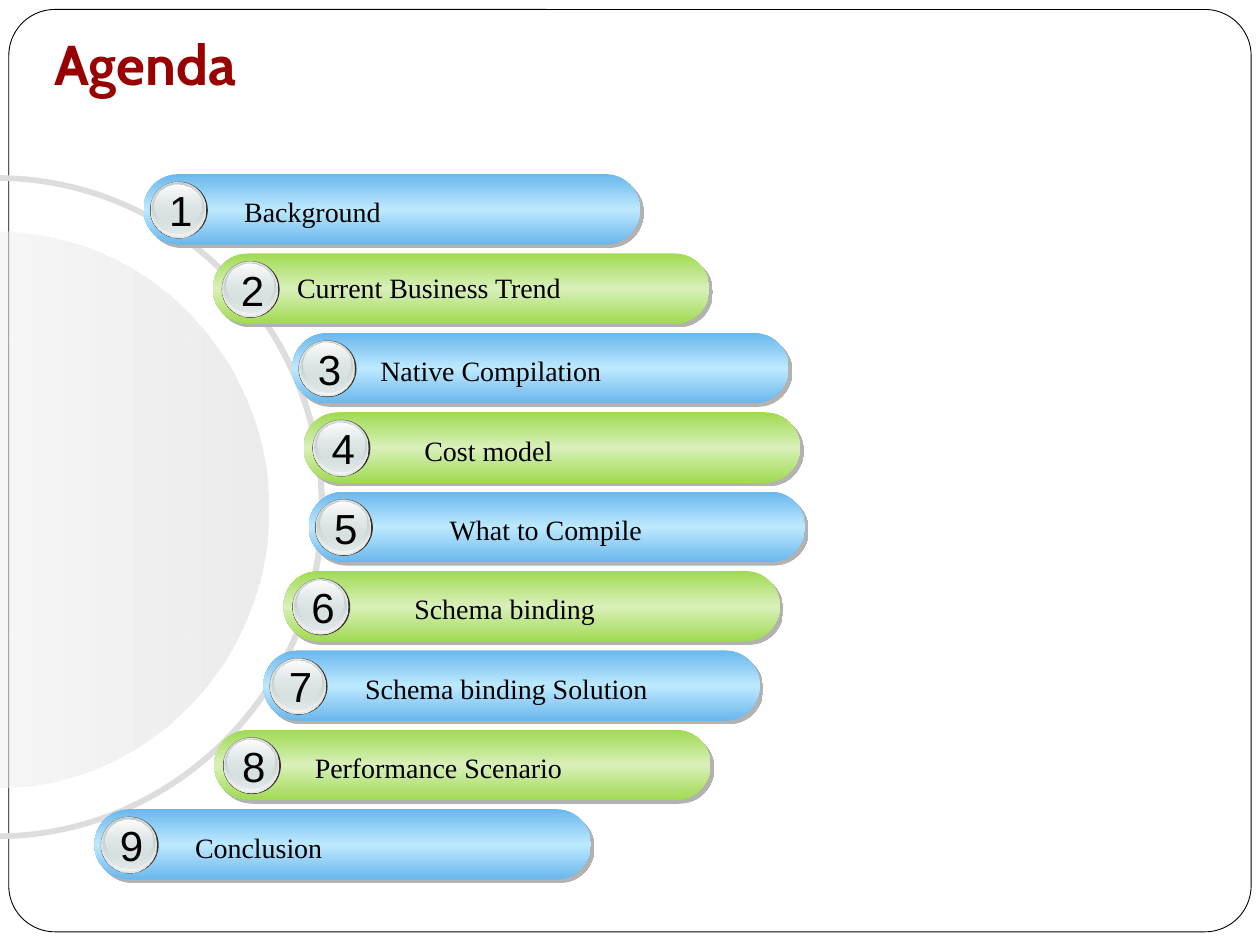
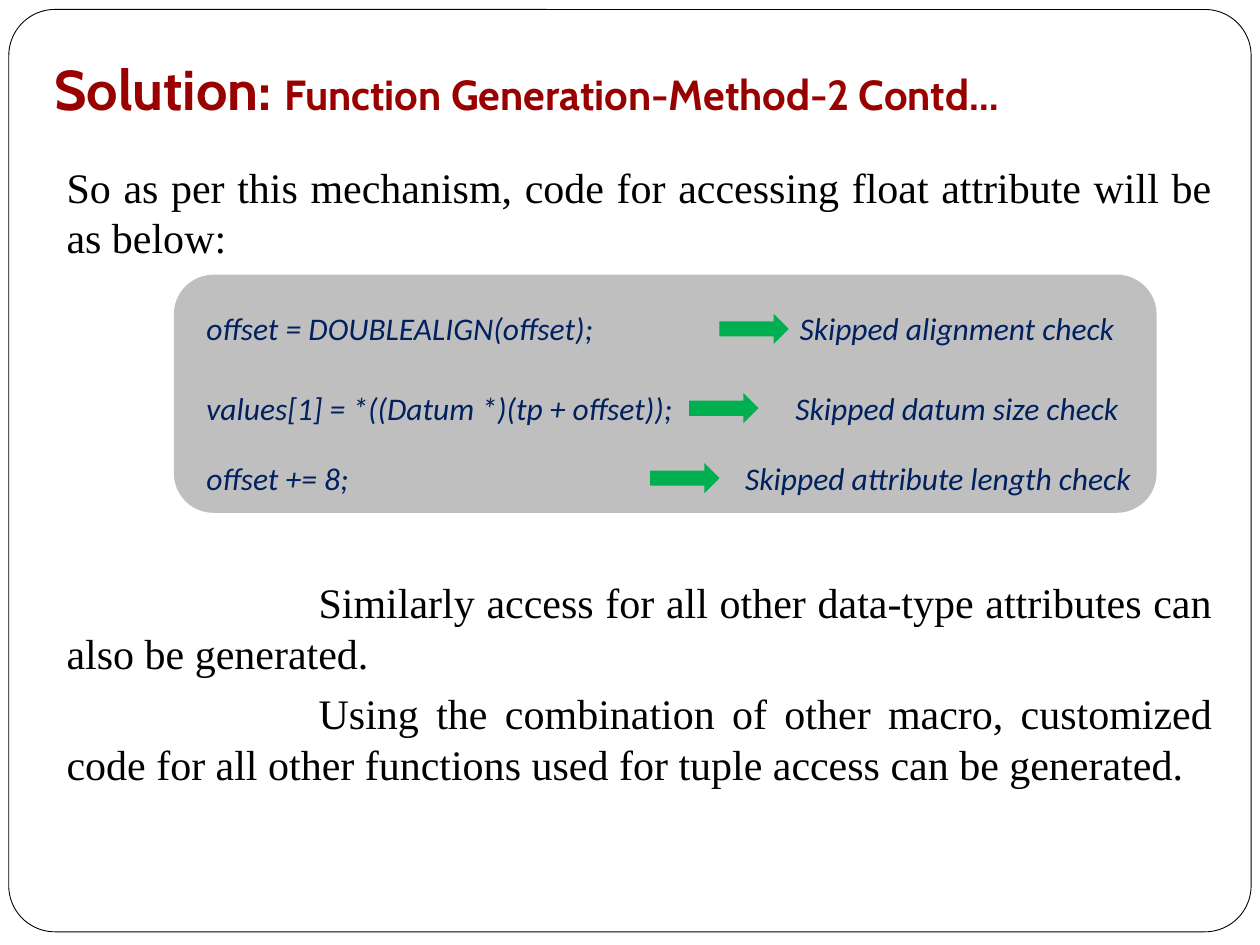
from typing import NamedTuple, Optional

from lxml import etree
from pptx import Presentation
from pptx.dml.color import RGBColor
from pptx.enum.shapes import MSO_SHAPE
from pptx.enum.text import MSO_ANCHOR, PP_ALIGN
from pptx.oxml.ns import qn
from pptx.util import Emu, Inches, Pt

ROUND_RECT, OVAL = MSO_SHAPE.ROUNDED_RECTANGLE, MSO_SHAPE.OVAL
RIGHT_ARROW = MSO_SHAPE.RIGHT_ARROW
LEFT, CENTER, JUSTIFY = PP_ALIGN.LEFT, PP_ALIGN.CENTER, PP_ALIGN.JUSTIFY
TOP, MIDDLE = MSO_ANCHOR.TOP, MSO_ANCHOR.MIDDLE

# The slide is a grid of 100 columns by 75 rows; all places count in these.
SLIDE_W, SLIDE_H = Inches(10), Inches(7.5)
COL, ROW = SLIDE_W / 100, SLIDE_H / 75
CURVE = 0.55  # handle length of a quarter ellipse, as a share of its radius

WHITE = RGBColor(0xFF, 0xFF, 0xFF)
BLACK = RGBColor(0x00, 0x00, 0x00)
RED = RGBColor(0x99, 0x00, 0x00)
NAVY = RGBColor(0x00, 0x20, 0x60)
GREEN = RGBColor(0x00, 0xB0, 0x50)
PANEL_GREY = RGBColor(0xBF, 0xBF, 0xBF)
SHADOW_GREY = RGBColor(0xB2, 0xB2, 0xB2)
RING_GREY = RGBColor(0xDD, 0xDD, 0xDD)
DISC_PALE = RGBColor(0xEE, 0xEE, 0xEE)
BLUE_EDGE = RGBColor(0x6A, 0xB7, 0xEC)
BLUE_MID = RGBColor(0xBD, 0xE9, 0xFF)
LIME_EDGE = RGBColor(0xA0, 0xDA, 0x52)
LIME_MID = RGBColor(0xD9, 0xF0, 0xBA)
RIM = RGBColor(0x33, 0x33, 0x33)
STEEL = RGBColor(0x99, 0xA1, 0xA2)
SILVER = RGBColor(0xC1, 0xCB, 0xCC)
MIST = RGBColor(0xD6, 0xE1, 0xE2)
PEARL = RGBColor(0xF2, 0xF5, 0xF5)
IVORY = RGBColor(0xE9, 0xE5, 0xDC)

TITLE = dict(name="Cabin", size=Pt(32), bold=True, color=RED)
SUBTITLE = TITLE | dict(size=Pt(24))
LABEL = dict(name="Times New Roman", size=Pt(16), color=BLACK)
BODY = LABEL | dict(size=Pt(24))
NUMBER = dict(name="Arial", size=Pt(24), color=BLACK)
CODE = dict(name="Calibri", size=Pt(18), italic=True, color=NAVY)


class Box(NamedTuple):
    x: float
    y: float
    w: float
    h: float

    def emu(self) -> tuple:
        return (Emu(round(self.x * COL)), Emu(round(self.y * ROW)),
                Emu(round(self.w * COL)), Emu(round(self.h * ROW)))


class Stop(NamedTuple):
    share: int
    color: RGBColor
    opacity: int = 100


class BadgeLayer(NamedTuple):
    box: Box
    stops: tuple
    line: Optional[RGBColor] = None


class BarStyle(NamedTuple):
    stops: tuple
    badge_inset: float


class AgendaItem(NamedTuple):
    label: str
    bar_x: float
    label_x: float
    label_w: float = 35
    label_drop: float = 1.17
    align: PP_ALIGN = LEFT


class CodeStep(NamedTuple):
    code: str
    note: str
    y: float
    arrow_x: float
    note_x: float
    note_w: float = 29.9


BAR_STYLES = [
    BarStyle((Stop(0, BLUE_EDGE), Stop(50, BLUE_MID), Stop(100, BLUE_EDGE)), 0.5),
    BarStyle((Stop(0, LIME_EDGE), Stop(50, LIME_MID), Stop(100, LIME_EDGE)), 0.7),
]
BADGE_LAYERS = [
    BadgeLayer(Box(0, 0, 4.6, 4.5), (Stop(0, RIM),)),
    BadgeLayer(Box(0.05, 0, 4.4, 4.4), (Stop(0, STEEL), Stop(100, MIST))),
    BadgeLayer(Box(0.1, 0.1, 4.3, 4.3), (Stop(0, MIST, 0), Stop(100, PEARL)), IVORY),
    BadgeLayer(Box(0.15, 0.1, 4.1, 4), (Stop(0, SILVER), Stop(100, MIST, 48))),
    BadgeLayer(Box(0.4, 0.2, 3.7, 3.3), (Stop(0, WHITE), Stop(100, MIST, 38))),
]
AGENDA = [
    AgendaItem("Background", 11.4, 18.4),
    AgendaItem("Current Business Trend", 16.9, 19.3, 29.5, 0.87, CENTER),
    AgendaItem("Native Compilation", 23.2, 29.2),
    AgendaItem("Cost model", 24.1, 32.7, 27.6),
    AgendaItem("What to Compile", 24.5, 34.7, 27.1),
    AgendaItem("Schema binding", 22.5, 31.9),
    AgendaItem("Schema binding Solution", 20.9, 28),
    AgendaItem("Performance Scenario", 17, 24),
    AgendaItem("Conclusion", 7.5, 14.5),
]
FIRST_BAR_Y, BAR_PITCH = 13.82, 6.3
BAR_W, BAR_H = 39.4, 5.6

CODE_STEPS = [
    CodeStep("offset = DOUBLEALIGN(offset);", "Skipped alignment check", 24.05, 57.1, 61),
    CodeStep("values[1] = *((Datum *)(tp + offset));", "Skipped datum size check",
             30.35, 54.7, 61),
    CodeStep("offset += 8;", "Skipped attribute length check", 35.9, 51.6, 57.9, 33.1),
]
INTRO = "So as per this mechanism, code for accessing float attribute will be as below:"
REMARKS = [
    "Similarly access for all other data-type attributes can also be generated.",
    "Using the combination of other macro, customized code for all other functions "
    "used for tuple access can be generated.",
]


def paint(shape, stops: tuple, angle: int) -> None:
    """Fill with one solid colour, or with a gradient turned clockwise by angle."""
    if len(stops) == 1:
        shape.fill.solid()
        shape.fill.fore_color.rgb = stops[0].color
        return
    shape.fill.gradient()
    shape.fill.gradient_angle = -angle % 360
    gs_list = shape._element.spPr.find(qn("a:gradFill")).find(qn("a:gsLst"))
    for gs in list(gs_list):
        gs_list.remove(gs)
    for stop in stops:
        gs = etree.SubElement(gs_list, qn("a:gs"), pos=str(stop.share * 1000))
        clr = etree.SubElement(gs, qn("a:srgbClr"), val=str(stop.color))
        if stop.opacity < 100:
            etree.SubElement(clr, qn("a:alpha"), val=str(stop.opacity * 1000))


def finish(shape, stops: tuple, line: Optional[RGBColor] = None,
           width: float = 0.75, angle: int = 90):
    """Set fill and outline, and drop the theme's shadow."""
    paint(shape, stops, angle)
    if line is None:
        shape.line.fill.background()
    else:
        shape.line.color.rgb = line
        shape.line.width = Pt(width)
    shape.shadow.inherit = False
    return shape


def add_preset(parent, kind, box: Box, *stops: Stop, **outline):
    return finish(parent.shapes.add_shape(kind, *box.emu()), stops, **outline)


def cast_shadow(shape) -> None:
    effects = shape._element.spPr.find(qn("a:effectLst"))
    shadow = etree.SubElement(effects, qn("a:outerShdw"), blurRad="0",
                              dist=str(Pt(2.8)), dir=str(45 * 60000), algn="ctr")
    etree.SubElement(shadow, qn("a:srgbClr"), val=str(SHADOW_GREY))


def add_run(p, text: str, fmt: dict) -> None:
    r = p.add_run()
    r.text = text
    for key, value in fmt.items():
        if key == "color":
            r.font.color.rgb = value
        else:
            setattr(r.font, key, value)


def add_text(s, box: Box, paragraphs: list, align=LEFT, anchor=TOP,
             margins: tuple = (1, 0.5, 1, 0.5)):
    """Each paragraph is a list of (text, format) runs."""
    tf = s.shapes.add_textbox(*box.emu()).text_frame
    tf.word_wrap, tf.vertical_anchor = True, anchor
    for side, columns in zip(("left", "top", "right", "bottom"), margins):
        setattr(tf, f"margin_{side}", Emu(round(columns * COL)))
    for i, runs in enumerate(paragraphs):
        p = tf.add_paragraph() if i else tf.paragraphs[0]
        p.alignment = align
        for text, fmt in runs:
            add_run(p, text, fmt)
    return tf


def add_framed_slide(prs, title_y: float, title: list):
    s = prs.slides.add_slide(prs.slide_layouts[6])
    frame = add_preset(s, ROUND_RECT, Box(0.7, 0.75, 98.6, 73.2), Stop(0, WHITE),
                       line=BLACK, width=0.5)
    frame.adjustments[0] = 0.05
    add_text(s, Box(4.3, title_y, 91.3, 5.4), [title], anchor=MIDDLE,
             margins=(0, 0, 0.9, 0))
    return s


def half_ellipse(cx: float, cy: float, rx: float, ry: float) -> list:
    """Knots and handles of the right half, from top to bottom."""
    shares = [(0, -1), (CURVE, -1), (1, -CURVE), (1, 0), (1, CURVE), (CURVE, 1), (0, 1)]
    return [(round((cx + u * rx) * COL), round((cy + v * ry) * ROW)) for u, v in shares]


def add_curved(s, arcs: list, *stops: Stop):
    """Join half ellipses by straight lines into one closed outline."""
    points = [point for arc in arcs for point in arc]
    builder = s.shapes.build_freeform(*points[0], scale=1.0)
    builder.add_line_segments(points[1:], close=True)
    shape = builder.convert_to_shape()
    lines = list(shape._element.iter(qn("a:lnTo")))
    for start in range(0, len(lines), 7):
        for first in (start, start + 3):
            curve = etree.Element(qn("a:cubicBezTo"))
            lines[first].addprevious(curve)
            for line in lines[first:first + 3]:
                curve.append(line[0])
                line.getparent().remove(line)
    return finish(shape, stops, angle=0)


def add_badge(s, x: float, y: float, number: int) -> None:
    group = s.shapes.add_group_shape()
    for layer in BADGE_LAYERS:
        box = layer.box._replace(x=x + layer.box.x, y=y + layer.box.y)
        add_preset(group, OVAL, box, *layer.stops, line=layer.line)
    add_text(s, Box(x + 0.8, y - 0.25, 3.3, 5), [[(str(number), NUMBER)]], CENTER,
             margins=(0, 0.5, 0, 0.5))


def add_agenda_bar(s, index: int, item: AgendaItem) -> None:
    style = BAR_STYLES[index % len(BAR_STYLES)]
    y = FIRST_BAR_Y + index * BAR_PITCH
    bar = add_preset(s, ROUND_RECT, Box(item.bar_x, y, BAR_W, BAR_H), *style.stops)
    bar.adjustments[0] = 0.5
    cast_shadow(bar)
    add_badge(s, item.bar_x + style.badge_inset, y + 0.6, index + 1)
    add_text(s, Box(item.label_x, y + item.label_drop, item.label_w, 4.3),
             [[(item.label, LABEL)]], item.align)


def build_agenda(prs) -> None:
    s = add_framed_slide(prs, 2.3, [("Agenda", TITLE)])
    outer = half_ellipse(-0.3, 40.25, 26.1, 26.35)
    inner = half_ellipse(-0.3, 40.25, 25.6, 25.9)
    add_curved(s, [outer, inner[::-1]], Stop(0, RING_GREY))
    add_curved(s, [half_ellipse(-0.2, 40.45, 21.5, 22.05)],
               Stop(0, DISC_PALE, 52), Stop(100, RING_GREY, 56))
    for index, item in enumerate(AGENDA):
        add_agenda_bar(s, index, item)


def add_body(s) -> None:
    tf = add_text(s, Box(4.3, 12.3, 92.9, 59.1),
                  [[(text, BODY)] for text in (INTRO, *REMARKS)], JUSTIFY)
    for p, gap, indent in zip(tf.paragraphs, (5.8, 180, 5.8), (0, 20, 20)):
        p.space_before = Pt(gap)
        p._p.get_or_add_pPr().set("indent", str(round(indent * COL)))


def add_code_step(s, step: CodeStep) -> None:
    add_text(s, Box(15.4, step.y, 40.9, 4), [[(step.code, CODE)]])
    add_text(s, Box(step.note_x, step.y, step.note_w, 4), [[(step.note, CODE)]], CENTER)
    add_preset(s, RIGHT_ARROW, Box(step.arrow_x, step.y + 0.85, 5.5, 2.4), Stop(0, GREEN))


def build_solution(prs) -> None:
    s = add_framed_slide(prs, 4.3, [("Solution: ", TITLE),
                                    ("Function Generation-Method-2 Contd…", SUBTITLE)])
    add_body(s)
    add_preset(s, ROUND_RECT, Box(13.8, 21.8, 78, 18.9), Stop(0, PANEL_GREY))
    for step in CODE_STEPS:
        add_code_step(s, step)


def main() -> None:
    prs = Presentation()
    prs.slide_width, prs.slide_height = SLIDE_W, SLIDE_H
    build_agenda(prs)
    build_solution(prs)
    prs.save("out.pptx")


if __name__ == "__main__":
    main()
